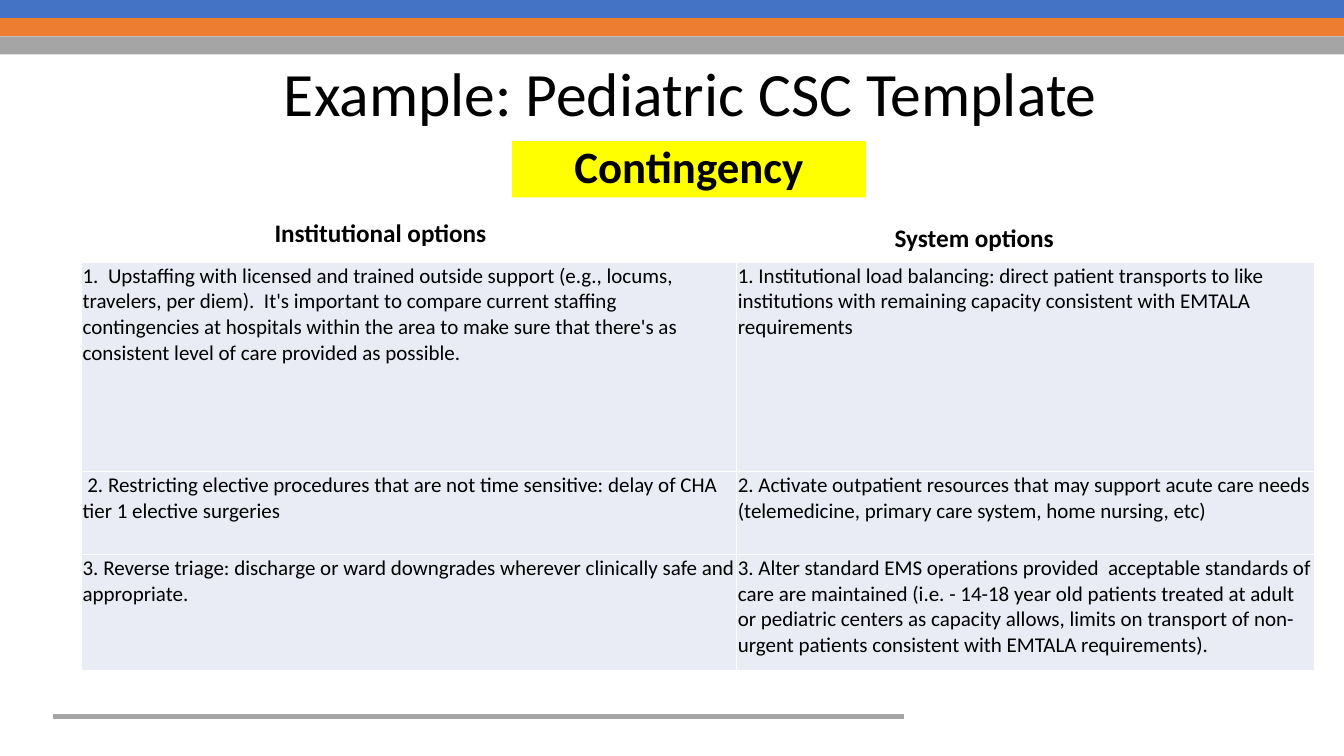
from dataclasses import dataclass

from lxml import etree
from pptx import Presentation
from pptx.dml.color import RGBColor
from pptx.enum.shapes import MSO_CONNECTOR, MSO_SHAPE
from pptx.enum.text import MSO_ANCHOR, PP_ALIGN
from pptx.oxml.ns import qn
from pptx.util import Inches, Pt

RECTANGLE = MSO_SHAPE.RECTANGLE
STRAIGHT = MSO_CONNECTOR.STRAIGHT
MIDDLE, TOP = MSO_ANCHOR.MIDDLE, MSO_ANCHOR.TOP
CENTER, LEFT = PP_ALIGN.CENTER, PP_ALIGN.LEFT

# The slide grid: square cells, ten to the inch
COLUMNS, ROWS = 133.33, 75


def grid(count):
    return Inches(count / 10)


@dataclass(frozen=True)
class Theme:
    font: str = "Calibri"
    text: str = "000000"
    bands: tuple = ("4472C4", "ED7D31", "A5A5A5")
    rule: str = "A5A5A5"
    highlight: str = "FFFF00"
    cell: str = "E9EBF5"
    border: str = "FFFFFF"
    title_size: int = 44
    stage_size: int = 32
    heading_size: int = 18
    body_size: int = 15


@dataclass(frozen=True)
class Box:
    left: float
    top: float
    width: float
    height: float

    def lengths(self):
        return [grid(n) for n in (self.left, self.top, self.width, self.height)]

    def inner(self, left, top, width, height):
        return Box(self.left + left, self.top + top, width, height)


THEME = Theme()

OPTIONS = [
    ("1.  Upstaffing with licensed and trained outside support (e.g., locums, travelers, "
     "per diem).  It's important to compare current staffing contingencies at hospitals "
     "within the area to make sure that there's as consistent level of care provided as "
     "possible.",
     "1. Institutional load balancing: direct patient transports to like institutions "
     "with remaining capacity consistent with EMTALA requirements"),
    (" 2. Restricting elective procedures that are not time sensitive: delay of CHA "
     "tier 1 elective surgeries",
     "2. Activate outpatient resources that may support acute care needs (telemedicine, "
     "primary care system, home nursing, etc)"),
    ("3. Reverse triage: discharge or ward downgrades wherever clinically safe and "
     "appropriate.",
     "3. Alter standard EMS operations provided  acceptable standards of care are "
     "maintained (i.e. - 14-18 year old patients treated at adult or pediatric centers "
     "as capacity allows, limits on transport of non-urgent patients consistent with "
     "EMTALA requirements)."),
]


def color(value):
    return RGBColor.from_string(value)


def write(frame, text, size, bold=False, align=CENTER, anchor=TOP, spacing=1.0):
    frame.word_wrap = True
    frame.vertical_anchor = anchor
    para = frame.paragraphs[0]
    para.text = text
    para.alignment = align
    para.line_spacing = spacing
    font = para.runs[0].font
    font.name, font.size, font.bold = THEME.font, Pt(size), bold
    font.color.rgb = color(THEME.text)


def add_block(slide, box, fill):
    block = slide.shapes.add_shape(RECTANGLE, *box.lengths())
    block.shadow.inherit = False
    block.fill.solid()
    block.fill.fore_color.rgb = color(fill)
    block.line.fill.background()
    return block


def add_label(slide, box, text, size, **style):
    label = slide.shapes.add_textbox(*box.lengths())
    write(label.text_frame, text, size, **style)


def add_bands(slide, box):
    height = box.height / len(THEME.bands)
    for index, fill in enumerate(THEME.bands):
        add_block(slide, box.inner(0, index * height, box.width, height), fill)


def add_rule(slide, box):
    y = grid(box.top)
    rule = slide.shapes.add_connector(
        STRAIGHT, grid(box.left), y, grid(box.left + box.width), y)
    rule.line.color.rgb = color(THEME.rule)
    rule.line.width = Pt(4)
    etree.SubElement(rule._element.spPr, qn("a:effectLst"))


def add_header(slide, box):
    add_label(slide, box.inner(0, 0, box.width, 10.7), "Example: Pediatric CSC Template",
              THEME.title_size, anchor=MIDDLE, spacing=0.9)
    stage = add_block(slide, box.inner(41.9, 9.8, 35.1, 5.6), THEME.highlight)
    write(stage.text_frame, "Contingency", THEME.stage_size, bold=True,
          anchor=MIDDLE, spacing=0.9)


def add_borders(cell):
    properties = cell._tc.get_or_add_tcPr()
    for index, side in enumerate(("lnL", "lnR", "lnT", "lnB")):
        line = etree.Element(qn(f"a:{side}"), w=str(Pt(1)))
        fill = etree.SubElement(line, qn("a:solidFill"))
        etree.SubElement(fill, qn("a:srgbClr"), val=THEME.border)
        properties.insert(index, line)


def add_options(slide, box):
    # Column headings
    for heading, left, top in (("Institutional options", 16.3, 0),
                               ("System options", 75.2, 0.5)):
        add_label(slide, box.inner(left, top, 26.7, 4), heading,
                  THEME.heading_size, bold=True)

    # Table of options
    area = box.inner(0, 4.9, box.width, box.height - 4.9)
    table = slide.shapes.add_table(len(OPTIONS), 2, *area.lengths()).table
    table.first_row = table.horz_banding = False
    for column, width in zip(table.columns, (65, box.width - 65)):
        column.width = grid(width)
    for row, height in zip(table.rows, (20.8, 8.2, 11.5)):
        row.height = grid(height)
    for row, texts in zip(table.rows, OPTIONS):
        for cell, text in zip(row.cells, texts):
            cell.margin_left = cell.margin_right = cell.margin_top = Inches(0.01)
            cell.margin_bottom = 0
            cell.fill.solid()
            cell.fill.fore_color.rgb = color(THEME.cell)
            write(cell.text_frame, text, THEME.body_size, align=LEFT)
            cell.vertical_anchor = TOP
            add_borders(cell)


def main():
    deck = Presentation()
    deck.slide_width, deck.slide_height = grid(COLUMNS), grid(ROWS)
    slide = deck.slides.add_slide(deck.slide_layouts[6])
    add_bands(slide, Box(0, 0, COLUMNS, 5.4))
    add_rule(slide, Box(5.3, 71.1, 84.4, 0))
    add_header(slide, Box(8.9, 4.2, 119.3, 15.4))
    add_options(slide, Box(8.1, 21.1, 122.3, 45.4))
    deck.save("out.pptx")


if __name__ == "__main__":
    main()
